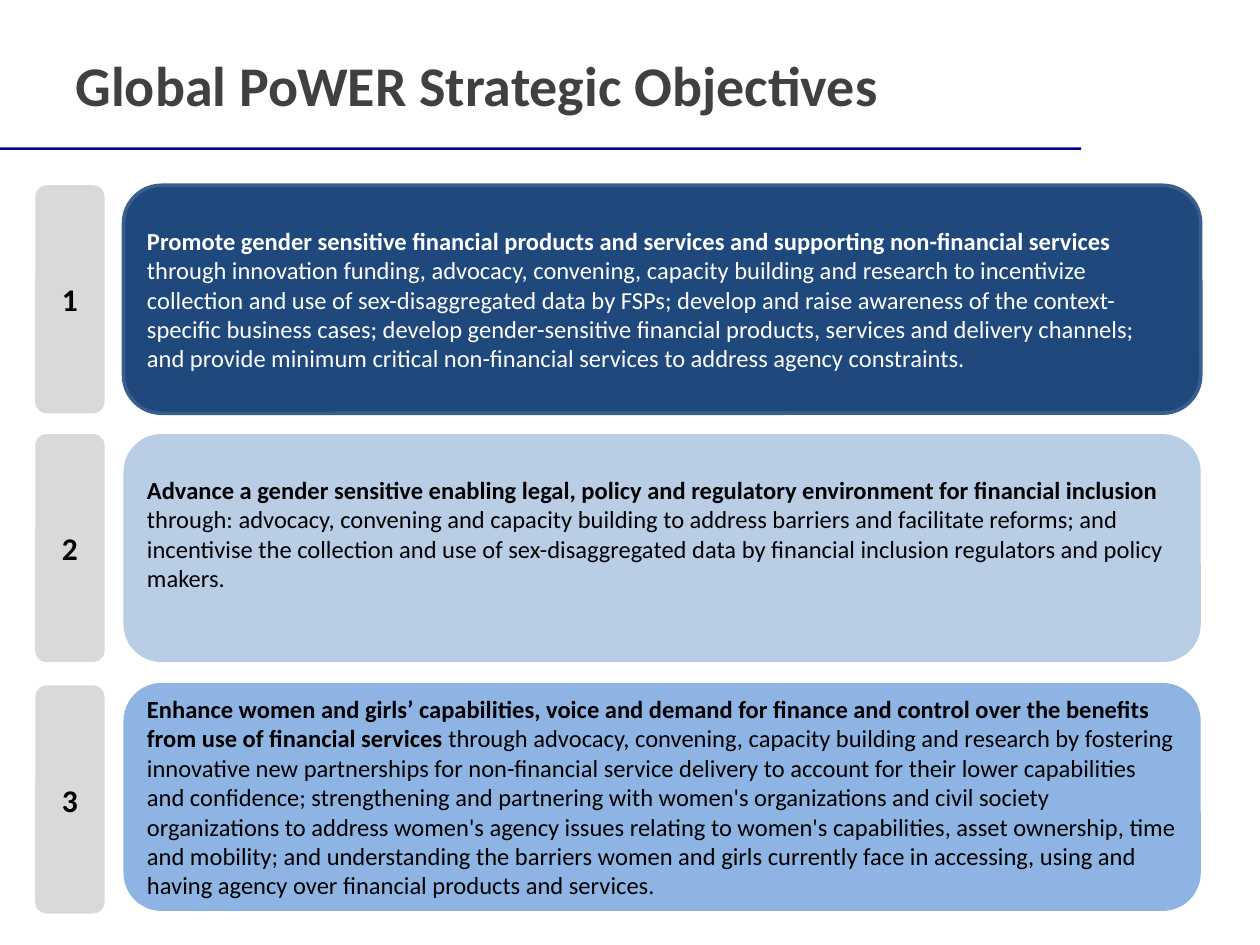
from pptx import Presentation
from pptx.dml.color import RGBColor
from pptx.enum.shapes import MSO_SHAPE
from pptx.enum.text import MSO_ANCHOR, PP_ALIGN
from pptx.util import Inches, Pt

COLS, ROWS = 100, 75
WIDE, HIGH = Inches(10), Inches(7.5)
TOP, STEP, TALL = 14.7, 19.75, 18.1

GOALS = [
    dict(fill="1F497D", ink="FFFFFF", edge="3A5F8C", drop=0,
         pad=(0.05, 0.05),
         head="Promote gender sensitive financial products and services and "
              "supporting non-financial services ",
         body="through innovation funding, advocacy, convening, capacity "
              "building and research to incentivize collection and use of "
              "sex-disaggregated data by FSPs; develop and raise awareness of "
              "the context-specific business cases; develop gender-sensitive "
              "financial products, services and delivery channels; and provide "
              "minimum critical non-financial services to address agency "
              "constraints."),
    dict(fill="B9CDE5", ink="000000", edge=None, drop=0,
         pad=(0.05, 0.28),
         head="Advance a gender sensitive enabling legal, policy and "
              "regulatory environment for financial inclusion",
         body=" through: advocacy, convening and capacity building to address "
              "barriers and facilitate reforms; and incentivise the collection "
              "and use of sex-disaggregated data by financial inclusion "
              "regulators and policy makers."),
    dict(fill="8EB4E3", ink="000000", edge=None, drop=0.2,
         pad=(0, 0),
         head="Enhance women and girls’ capabilities, voice and demand for "
              "finance and control over the benefits from use of financial "
              "services",
         body=" through advocacy, convening, capacity building and research by "
              "fostering innovative new partnerships for non-financial service "
              "delivery to account for their lower capabilities and "
              "confidence; strengthening and partnering with women's "
              "organizations and civil society organizations to address "
              "women's agency issues relating to women's capabilities, asset "
              "ownership, time and mobility; and understanding the barriers "
              "women and girls currently face in accessing, using and having "
              "agency over financial products and services."),
]


def color(code):
    return RGBColor.from_string(code)


def place(box):
    x, y, w, h = box
    return (round(x * WIDE / COLS), round(y * HIGH / ROWS),
            round(w * WIDE / COLS), round(h * HIGH / ROWS))


def apply(item, form):
    for key, value in form.items():
        setattr(item, key, value)


def write(para, text, size, ink, bold=True):
    run = para.add_run()
    run.text = text
    apply(run.font, dict(name="Calibri", size=Pt(size), bold=bold))
    run.font.color.rgb = color(ink)


def draw(slide, kind, box, fill, edge=None):
    shape = slide.shapes.add_shape(kind, *place(box))
    shape.shadow.inherit = False
    shape.fill.solid()
    shape.fill.fore_color.rgb = color(fill)
    if edge:
        shape.line.color.rgb = color(edge)
        shape.line.width = Pt(2)
    else:
        shape.line.fill.background()
    return shape


def label(shape, align, top=0.05, base=0.05):
    frame = shape.text_frame
    apply(frame, dict(word_wrap=True, vertical_anchor=MSO_ANCHOR.MIDDLE,
                      margin_top=Inches(top), margin_bottom=Inches(base)))
    para = frame.paragraphs[0]
    para.alignment = align
    return para


def header(slide, box):
    title = slide.shapes.title
    spots = ("left", "top", "width", "height")
    apply(title, dict(zip(spots, place(box))))
    para = label(title, PP_ALIGN.LEFT)
    write(para, "Global PoWER Strategic Objectives", 32, "404040")
    draw(slide, MSO_SHAPE.RECTANGLE, (0, 11.7, 85.8, 0.2), "000090")


def entry(slide, box, num, goal):
    x, y, w, h = box
    tab = draw(slide, MSO_SHAPE.ROUNDED_RECTANGLE,
               (x, y + goal["drop"], 5.5, h), "D9D9D9")
    write(label(tab, PP_ALIGN.CENTER), str(num), 18, "000000")
    card = draw(slide, MSO_SHAPE.ROUNDED_RECTANGLE,
                (x + 7, y, w - 7, h), goal["fill"], goal["edge"])
    para = label(card, PP_ALIGN.LEFT, *goal["pad"])
    write(para, goal["head"], 14, goal["ink"])
    write(para, goal["body"], 14, goal["ink"], False)


def main():
    deck = Presentation()
    apply(deck, dict(slide_width=WIDE, slide_height=HIGH))
    slide = deck.slides.add_slide(deck.slide_layouts[5])
    header(slide, (5, 3.3, 80.8, 6.7))
    for row, goal in enumerate(GOALS):
        entry(slide, (2.8, TOP + row * STEP, 92.5, TALL), row + 1, goal)
    deck.save("out.pptx")


if __name__ == "__main__":
    main()
